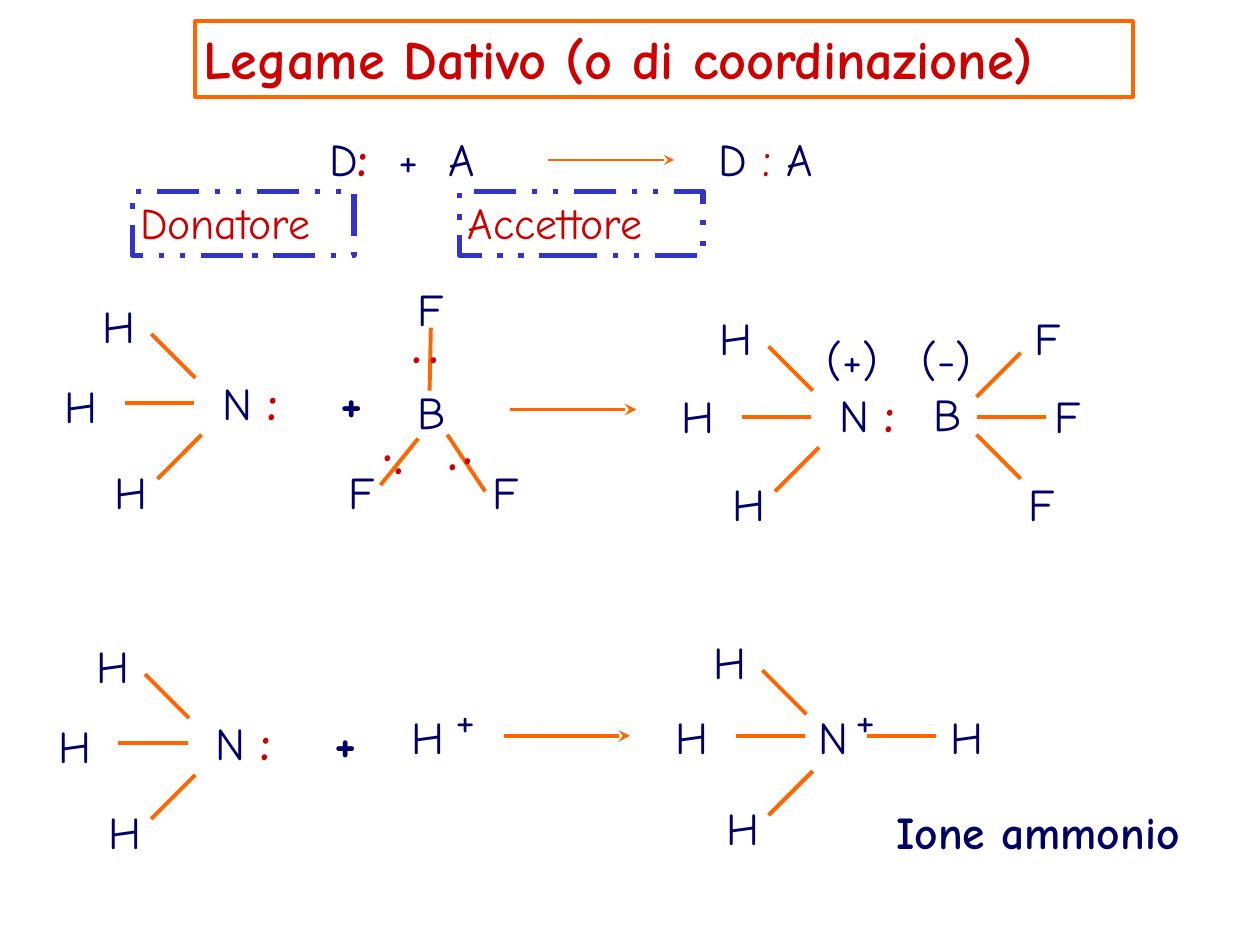
from dataclasses import dataclass
from typing import NamedTuple

from pptx import Presentation
from pptx.dml.color import RGBColor
from pptx.enum.dml import MSO_LINE
from pptx.enum.shapes import MSO_CONNECTOR, MSO_SHAPE
from pptx.enum.text import MSO_ANCHOR, MSO_AUTO_SIZE, PP_ALIGN
from pptx.oxml.ns import qn
from pptx.util import Pt
from lxml.etree import SubElement


class Style(NamedTuple):
    size: int
    color: str
    bold: bool = False


@dataclass(frozen=True)
class Theme:
    font: str = "Comic Neue"
    bond: str = "FF6600"
    frame: str = "3333CC"
    title: Style = Style(31, "CC0000", True)
    role: Style = Style(25, "CC0000")
    atom: Style = Style(26, "000066")
    caption: Style = Style(26, "000066", True)
    plus: Style = Style(29, "000066", True)
    pair: Style = Style(29, "CC0000", True)
    shared_pair: Style = Style(29, "CC0000")


THEME = Theme()


class Span(NamedTuple):
    text: str
    style: Style = THEME.atom


class Label(NamedTuple):
    text: str
    left: float
    top: float
    width: float
    style: Style = THEME.atom


class Bond(NamedTuple):
    x1: float
    y1: float
    x2: float
    y2: float
    width: float = 2.25
    arrow: bool = False


class Role(NamedTuple):
    text: str
    left: float
    width: float


@dataclass(frozen=True)
class Ammonia:
    left: float
    top: float
    bond_y: float
    atom_y: float
    lone_pair: bool = True


ROLES = [Role("Donatore", 75.6, 126.7), Role("Accettore", 262.8, 139)]

AMMONIAS = [
    Ammonia(32.4, 167.8, 230.4, 213.8),
    Ammonia(385.2, 175, 238.3, 219.6),
    Ammonia(28.8, 362.2, 424.8, 408.2),
    Ammonia(381.6, 360, 420.5, 403.2, lone_pair=False),
]

BONDS = [
    Bond(583.2, 201.6, 558, 226.8),
    Bond(583.2, 273.6, 558, 248.4),
    Bond(597.6, 238.3, 558, 238.3),
    Bond(239, 250.6, 217.4, 277.2),
    Bond(277.2, 280.8, 255.6, 248.4),
    Bond(245.5, 223.2, 246.2, 187.2),
    Bond(535, 420.5, 495.4, 420.5),
    Bond(313.2, 91.4, 385.2, 91.4, width=1.5, arrow=True),
    Bond(291.6, 234, 363.6, 234, arrow=True),
    Bond(288, 420.5, 360, 420.5, arrow=True),
]

FLUORINES = [
    (583.2, 270), (598.3, 219.6), (586.8, 175),
    (234, 158.4), (194.4, 262.8), (277.2, 262.8),
]
ELECTRONS = [
    (231.1, 176.4), (241.2, 176.4), (260.6, 234),
    (252, 237.6), (214.6, 232.6), (221, 239.8),
]

LABELS = [
    Label("B", 529.2, 218.2, 25.2),
    Label("B", 234, 217.4, 25.2),
    Label("(+)", 468, 187.2, 41),
    Label("(-)", 522, 187.2, 39),
    Label("+", 190.1, 209.5, 26, THEME.plus),
    Label("+", 186.5, 403.9, 26, THEME.plus),
    Label("H", 230.4, 403.2, 28.8),
    Label("+", 255.6, 392.4, 21.6),
    Label("N", 463, 403.2, 29.5),
    Label("+", 484.6, 392.4, 21.6),
    Label("H", 538.6, 403.2, 28.8),
    Label("Ione ammonio", 507.6, 457.2, 181.4, THEME.caption),
    *(Label("F", left, top, 24.5) for left, top in FLUORINES),
    *(Label(".", left, top, 21, THEME.pair) for left, top in ELECTRONS),
]


def write_text(frame, spans: list[Span], *, tabs: tuple = (), align=PP_ALIGN.LEFT) -> None:
    frame.word_wrap = True
    frame.auto_size = MSO_AUTO_SIZE.NONE
    frame.vertical_anchor = MSO_ANCHOR.TOP
    frame.margin_left = frame.margin_right = Pt(4.5)
    frame.margin_top = frame.margin_bottom = Pt(2.25)
    para = frame.paragraphs[0]
    para.alignment = align
    if tabs:
        stops = SubElement(para._p.get_or_add_pPr(), qn("a:tabLst"))
        for position in tabs:
            SubElement(stops, qn("a:tab"), pos=str(Pt(position)), algn="l")
    for text, style in spans:
        span = para.add_run()
        span.text = text
        span.font.name = THEME.font
        span.font.size = Pt(style.size)
        span.font.bold = style.bold
        span.font.color.rgb = RGBColor.from_string(style.color)


def set_line(line, color: str, width: float) -> None:
    line.color.rgb = RGBColor.from_string(color)
    line.width = Pt(width)


def add_text(page, spans: list[Span], left: float, top: float, width: float, **text_format) -> None:
    height = 38.9 if max(span.style.size for span in spans) == THEME.pair.size else 36
    box = page.shapes.add_textbox(Pt(left), Pt(top), Pt(width), Pt(height))
    write_text(box.text_frame, spans, **text_format)


def add_label(page, label: Label) -> None:
    add_text(page, [Span(label.text, label.style)], label.left, label.top, label.width)


def add_bond(page, bond: Bond) -> None:
    connector = page.shapes.add_connector(
        MSO_CONNECTOR.STRAIGHT, Pt(bond.x1), Pt(bond.y1), Pt(bond.x2), Pt(bond.y2)
    )
    set_line(connector.line, THEME.bond, bond.width)
    properties = connector._element.spPr
    if bond.arrow:
        SubElement(properties.find(qn("a:ln")), qn("a:tailEnd"), type="stealth")
    SubElement(properties, qn("a:effectLst"))


def add_role(page, role: Role) -> None:
    box = page.shapes.add_shape(
        MSO_SHAPE.RECTANGLE, Pt(role.left), Pt(109.4), Pt(role.width), Pt(36.7)
    )
    box.shadow.inherit = False
    box.fill.background()
    set_line(box.line, THEME.frame, 3)
    box.line.dash_style = MSO_LINE.DASH_DOT_DOT
    write_text(box.text_frame, [Span(role.text, THEME.role)])


def add_ammonia(page, group: Ammonia) -> None:
    x, y = group.left, group.top
    add_bond(page, Bond(x + 82.8, y + 80.6, x + 57.6, y + 105.8))
    add_bond(page, Bond(x + 79.2, y + 48.2, x + 54, y + 23))
    add_bond(page, Bond(x + 78.5, group.bond_y, x + 38.9, group.bond_y))
    for left, top in ((x + 28.8, y + 95), (x, group.atom_y), (x + 21.6, y)):
        add_label(page, Label("H", left, top, 28.8))
    if group.lone_pair:
        add_text(page, [Span("N "), Span(":", THEME.pair)], x + 90, y + 41, 50.4)


def add_title(page) -> None:
    title = page.shapes.title
    title.left, title.top, title.width, title.height = Pt(111.6), Pt(12.2), Pt(535.7), Pt(43.2)
    set_line(title.line, THEME.bond, 2.25)
    write_text(title.text_frame, [Span("Legame Dativo (o di coordinazione)", THEME.title)])


def main() -> None:
    deck = Presentation()
    deck.slide_width, deck.slide_height = Pt(720), Pt(540)
    page = deck.slides.add_slide(deck.slide_layouts[5])
    add_title(page)
    equation = [
        Span("D"), Span(":", THEME.pair), Span("\t+\tA\tD "),
        Span(":", THEME.shared_pair), Span(" A"),
    ]
    add_text(page, equation, 183.6, 69.8, 292.3, tabs=(39.6, 68.4, 222.5))
    for role in ROLES:
        add_role(page, role)
    for group in AMMONIAS:
        add_ammonia(page, group)
    for bond in BONDS:
        add_bond(page, bond)
    for label in LABELS:
        add_label(page, label)
    deck.save("out.pptx")


if __name__ == "__main__":
    main()
